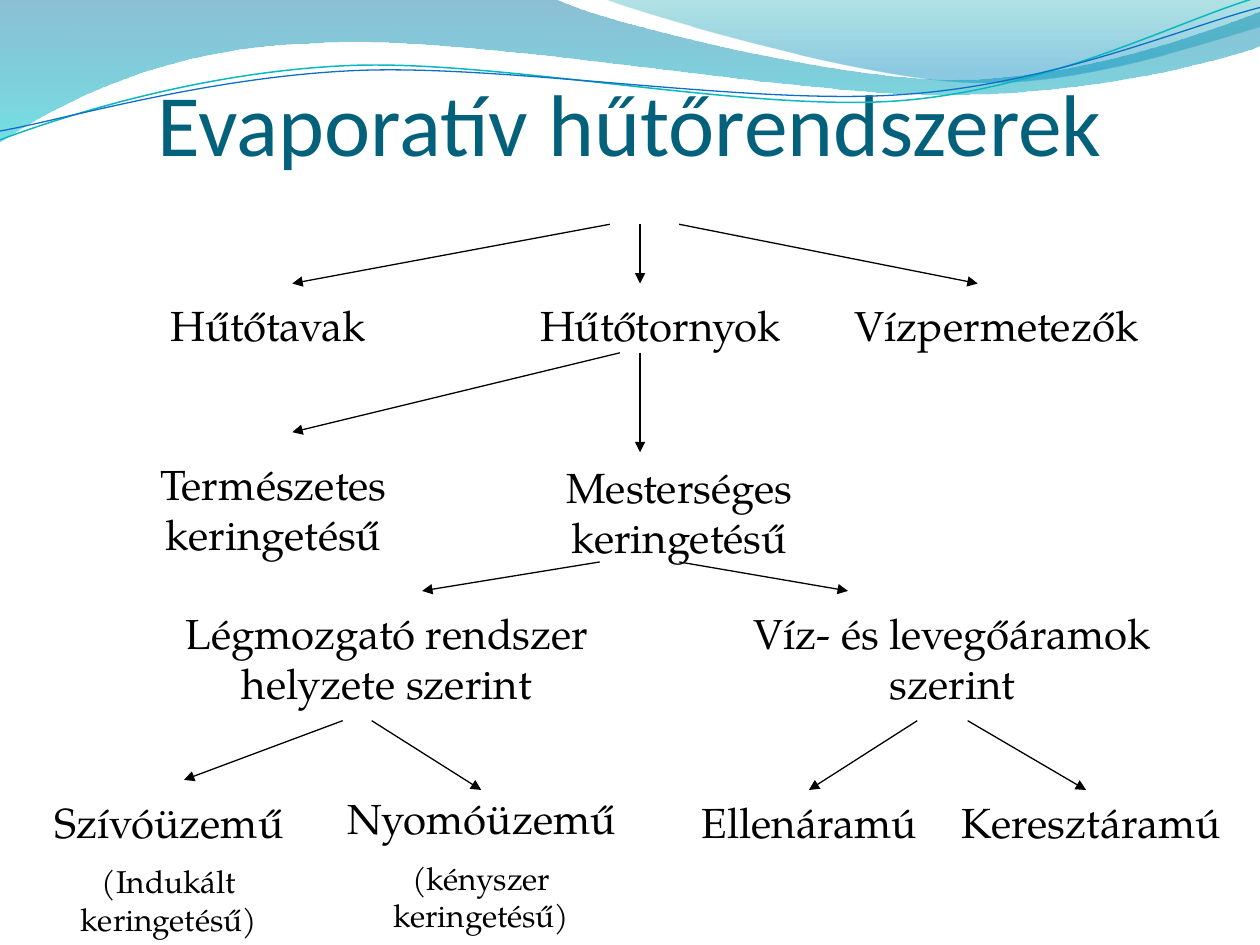
from math import cos, radians, sin

from lxml import etree
from pptx import Presentation
from pptx.dml.color import RGBColor
from pptx.enum.shapes import MSO_CONNECTOR
from pptx.enum.text import MSO_ANCHOR, MSO_AUTO_SIZE, PP_ALIGN
from pptx.oxml.ns import qn
from pptx.util import Inches, Pt

STRAIGHT = MSO_CONNECTOR.STRAIGHT
BOTTOM, CENTER = MSO_ANCHOR.BOTTOM, PP_ALIGN.CENTER
GROW, FIXED = MSO_AUTO_SIZE.SHAPE_TO_FIT_TEXT, MSO_AUTO_SIZE.NONE

BLACK = RGBColor(0x00, 0x00, 0x00)
TITLE = RGBColor(0x04, 0x61, 0x7B)
DEEP = RGBColor(0x00, 0x74, 0xA1)
AQUA = RGBColor(0x00, 0xC6, 0xCF)
TEAL = RGBColor(0x00, 0xA1, 0xA9)
SKY = RGBColor(0x00, 0x8B, 0xBF)
CYAN = RGBColor(0x0A, 0xB8, 0xBF)
BLUE = RGBColor(0x0F, 0x6F, 0xC6)
SERIF, SANS = "TeX Gyre Pagella", "Calibri"
TILT = 2.7

BANDS = [
    ([(0, 0), (4.4, -0.01),
      (4.76, 0.17, 6.64, 0.63, 7.58, 0.63), (8.53, 0.63, 9.58, 0.26, 10, 0.09),
      (10.01, 0.36),
      (9.83, 0.44, 8.7, 0.76, 7.46, 0.75), (6.22, 0.75, 3.82, 0.28, 2.57, 0.34),
      (1.29, 0.36, 0.46, 0.83, -0.01, 1.13), (0, 0)],
     [(0, DEEP, 45), (1, AQUA, 55)]),
    ([(4.79, -0.01),
      (5.09, 0.11, 6.82, 0.62, 7.69, 0.65), (8.56, 0.69, 9.61, 0.32, 10, 0.21),
      (10, 0), (4.79, -0.01)],
     [(0, TEAL, 30), (0.8, SKY, 45)]),
]
WAVES = [
    ([(0, 1.11),
      (0.48, 0.93, 1.58, 0.57, 2.77, 0.52), (3.95, 0.47, 5.93, 0.89, 7.13, 0.8),
      (8.33, 0.71, 9.38, 0.15, 9.98, -0.02)], (4.99, 0.58), CYAN, 0.85),
    ([(0, 1.04),
      (0.47, 0.96, 1.64, 0.61, 2.83, 0.56), (4.03, 0.51, 5.97, 0.84, 7.17, 0.75),
      (8.36, 0.67, 9.41, 0.21, 10, 0.06)], (5, 0.59), BLUE, 0.75),
]

NARROW, WIDE = 2.68, 3.86
ONE, TWO = 0.5, 0.91
NODES = [
    ((0, 6.27, NARROW, 0.96), "Szívóüzemű", "(Indukált keringetésű)"),
    ((2.48, 6.24, NARROW, 1.26), "Nyomóüzemű", "(kényszer keringetésű)"),
    ((1.14, 4.77, WIDE, TWO), "Légmozgató rendszer helyzete szerint"),
    ((5.63, 4.77, WIDE, TWO), "Víz- és levegőáramok szerint"),
    ((5.08, 6.27, NARROW, ONE), "Ellenáramú"),
    ((7.32, 6.27, NARROW, ONE), "Keresztáramú"),
    ((0.83, 3.59, NARROW, TWO), "Természetes keringetésű"),
    ((4.05, 3.61, NARROW, TWO), "Mesterséges keringetésű"),
    ((3.9, 2.33, NARROW, ONE), "Hűtőtornyok"),
    ((6.57, 2.33, NARROW, ONE), "Vízpermetezők"),
    ((0.83, 2.33, NARROW, ONE), "Hűtőtavak "),
]
ARROWS = [
    (4.84, 1.78, 2.32, 2.25), (5.08, 1.78, 5.08, 2.25), (5.39, 1.78, 7.76, 2.25),
    (5.08, 2.8, 5.08, 3.59), (4.92, 2.8, 2.32, 3.43),
    (4.76, 4.46, 3.35, 4.69), (5.39, 4.46, 6.73, 4.69),
    (2.72, 5.72, 1.46, 6.19), (2.95, 5.72, 3.82, 6.27),
    (7.28, 5.72, 6.42, 6.27), (7.68, 5.72, 8.62, 6.27),
]


def turn(part, mid, angle):
    """Turn the points of one path part clockwise around a middle."""
    c, s = cos(radians(angle)), sin(radians(angle))
    points = []
    for x, y in zip(part[::2], part[1::2]):
        dx, dy = x - mid[0], y - mid[1]
        points += [mid[0] + dx * c - dy * s, mid[1] + dx * s + dy * c]
    return points


def outline(slide, path, closed):
    """Draw a path of corners and cubic curves as a freeform."""
    flat = [Inches(n) for part in path for n in part]
    points = list(zip(flat[::2], flat[1::2]))
    build = slide.shapes.build_freeform(*points[0])
    build.add_line_segments(points[1:], close=closed)
    shape = build.convert_to_shape()
    shape.shadow.inherit = False
    lines = iter(shape._element.findall(".//" + qn("a:lnTo")))
    for part in path[1:]:
        line = next(lines)
        if len(part) == 6:
            line.tag = qn("a:cubicBezTo")
            for _ in range(2):
                other = next(lines)
                line.append(other[0])
                other.getparent().remove(other)
    return shape


def draw_header(slide):
    """Draw the shaded bands and thin waves at the top."""
    for path, stops in BANDS:
        band = outline(slide, path, True)
        band.line.fill.background()
        band.fill.gradient()
        band.fill.gradient_angle = 270
        for stop, (place, color, _) in zip(band.fill.gradient_stops, stops):
            stop.position = place
            stop.color.rgb = color
        tints = band._element.spPr.findall(".//" + qn("a:gs") + "/" + qn("a:srgbClr"))
        for tint, (_, _, alpha) in zip(tints, stops):
            etree.SubElement(tint, qn("a:alpha"), val=str(alpha * 1000))
    for path, mid, color, width in WAVES:
        wave = outline(slide, [turn(part, mid, TILT) for part in path], False)
        wave.rotation = 360 - TILT
        wave.fill.background()
        wave.line.color.rgb = color
        wave.line.width = Pt(width)


def write(para, text, font, size, color):
    """Add one centred run to a paragraph."""
    para.alignment = CENTER
    run = para.add_run()
    run.text = text
    run.font.name = font
    run.font.size = Pt(size)
    run.font.color.rgb = color


def draw_title(slide, box):
    """Place and format the title."""
    title = slide.shapes.title
    title.left, title.top, title.width, title.height = map(Inches, box)
    frame = title.text_frame
    frame.vertical_anchor = BOTTOM
    frame.auto_size = FIXED
    frame.margin_left = frame.margin_right = frame.margin_bottom = 0
    frame.margin_top = Inches(0.05)
    write(frame.paragraphs[0], "Evaporatív hűtőrendszerek", SANS, 50, TITLE)


def draw_node(slide, box, text, note=None):
    """Add a tree label with an optional smaller note."""
    node = slide.shapes.add_textbox(*map(Inches, box))
    frame = node.text_frame
    frame.word_wrap = True
    frame.auto_size = GROW
    write(frame.paragraphs[0], text, SERIF, 24, BLACK)
    if note:
        para = frame.add_paragraph()
        para.space_before = Pt(9)
        write(para, note, SERIF, 18, BLACK)
    return node


def draw_arrow(slide, ends):
    """Add a thin arrow between two points."""
    arrow = slide.shapes.add_connector(STRAIGHT, *map(Inches, ends))
    arrow.line.color.rgb = BLACK
    arrow.line.width = Pt(0.75)
    etree.SubElement(arrow.line._get_or_add_ln(), qn("a:tailEnd"), type="triangle")
    etree.SubElement(arrow._element.spPr, qn("a:effectLst"))
    return arrow


def draw_tree(slide):
    """Draw the labels and arrows, joined where they meet."""
    nodes = [draw_node(slide, *node) for node in NODES]
    for ends in ARROWS:
        arrow = draw_arrow(slide, ends)
        for node in nodes:
            gap = abs(node.left + node.width // 2 - arrow.end_x)
            if max(gap, abs(node.top - arrow.end_y)) < Inches(0.01):
                arrow.end_connect(node, 0)


def main():
    """Build and save the slide."""
    deck = Presentation()
    deck.slide_width, deck.slide_height = Inches(10), Inches(7.5)
    slide = deck.slides.add_slide(deck.slide_layouts[5])
    draw_header(slide)
    draw_title(slide, (0.12, 0.13, 9.76, 1.25))
    draw_tree(slide)
    deck.save("out.pptx")


if __name__ == "__main__":
    main()
